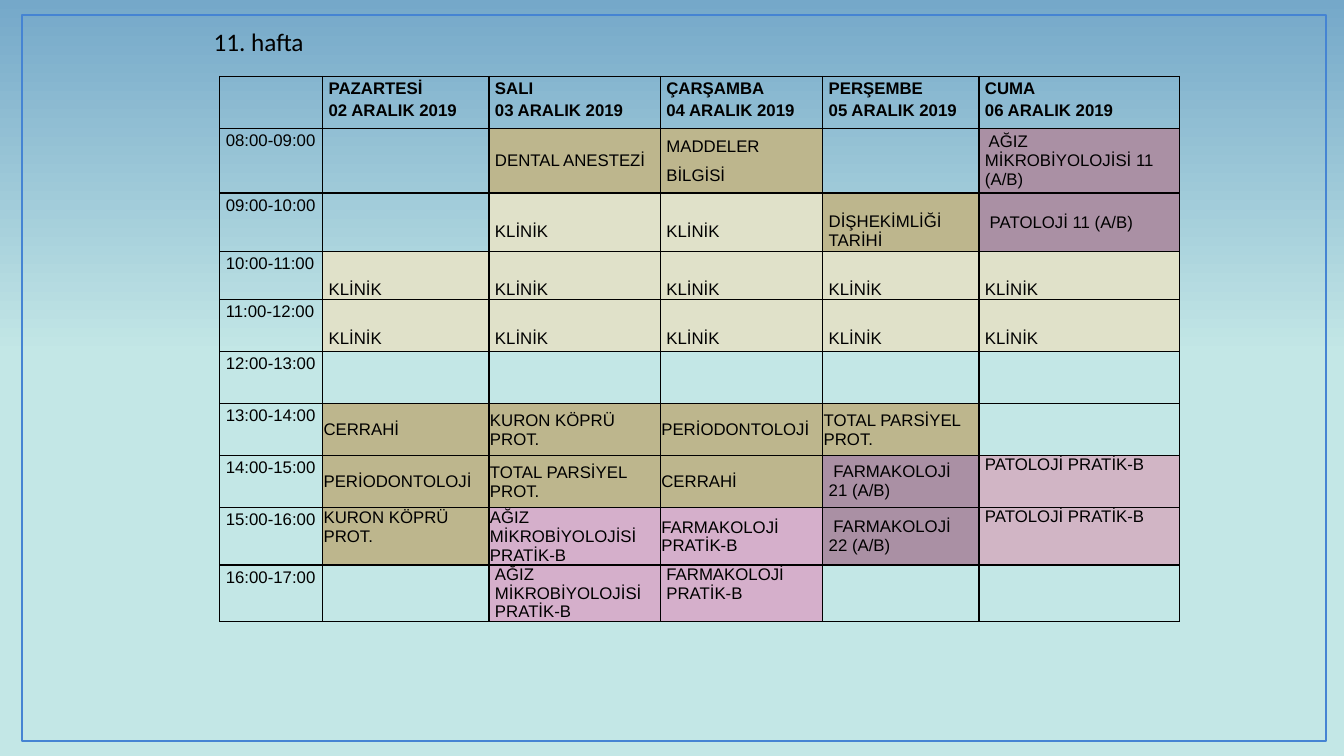
from collections import namedtuple
from dataclasses import dataclass

from lxml.etree import SubElement
from pptx import Presentation
from pptx.dml.color import RGBColor
from pptx.enum.shapes import MSO_SHAPE as Shape
from pptx.enum.text import MSO_ANCHOR as Anchor, MSO_AUTO_SIZE as AutoSize
from pptx.oxml.ns import qn
from pptx.util import Inches, Pt


@dataclass(frozen=True)
class Theme:
    """Colours, fonts and type sizes of the slide."""
    sky: str = "75A8C9"
    mist: str = "C3E7E6"
    frame: str = "4584D3"
    ink: str = "000000"
    lecture: str = "BDB68D"
    clinic: str = "E0E1C9"
    group: str = "AA90A4"
    pathology_lab: str = "D1B5C5"
    lab: str = "D5AFCB"
    table_font: str = "Arial"
    title_font: str = "Calibri"
    table_size: int = 12
    title_size: int = 18
    frame_width: float = 1.5
    border_width: int = 1


THEME = Theme()
Placement = namedtuple("Placement", "side top anchor spacing")
Entry = namedtuple("Entry", "text fill placement")

LABEL = Placement(0.6, 0, Anchor.TOP, 1.15)
TOP = Placement(0.6, 0, Anchor.TOP, None)
MIDDLE = Placement(0.6, 0, Anchor.MIDDLE, None)
FLUSH = Placement(0.1, 0.1, Anchor.MIDDLE, None)
FLUSH_TOP = Placement(0.1, 0.1, Anchor.TOP, None)
LOWERED = Placement(0.6, 1.9, Anchor.TOP, None)
LOW = Placement(0.6, 2.9, Anchor.TOP, None)
LOOSE = Placement(0.6, 0, Anchor.TOP, Pt(20))

COLUMN_WIDTHS = [10.2, 16.5, 17, 16.1, 15.5, 19.9]
ROW_HEIGHTS = [5.15, 6.4, 5.8, 4.8, 5.15, 5.15, 5.15, 5.15, 5.65, 5.6]
DAYS = ["PAZARTESİ", "SALI", "ÇARŞAMBA", "PERŞEMBE", "CUMA"]
FIRST_DATE, FIRST_HOUR = 2, 8

FREE = Entry("", None, TOP)
CLINIC = Entry("KLİNİK", THEME.clinic, LOW)
PATHOLOGY_LAB = Entry("PATOLOJİ PRATİK-B", THEME.pathology_lab, TOP)
SURGERY = Entry("CERRAHİ", THEME.lecture, FLUSH)
CROWN = Entry("KURON KÖPRÜ PROT.", THEME.lecture, FLUSH)
GUMS = Entry("PERİODONTOLOJİ", THEME.lecture, FLUSH)
DENTURE = Entry("TOTAL PARSİYEL PROT.", THEME.lecture, FLUSH)
MICROBIOLOGY_LAB = Entry("AĞIZ MİKROBİYOLOJİSİ PRATİK-B", THEME.lab, TOP)
PHARMACOLOGY_LAB = Entry("FARMAKOLOJİ PRATİK-B", THEME.lab, TOP)

SCHEDULE = [
    [FREE,
     Entry("DENTAL ANESTEZİ", THEME.lecture, MIDDLE),
     Entry("MADDELER BİLGİSİ", THEME.lecture, LOOSE),
     FREE,
     Entry(" AĞIZ MİKROBİYOLOJİSİ 11 (A/B)", THEME.group, MIDDLE)],
    [FREE, CLINIC, CLINIC,
     Entry("DİŞHEKİMLİĞİ TARİHİ", THEME.lecture, LOWERED),
     Entry(" PATOLOJİ 11 (A/B)", THEME.group, MIDDLE)],
    [CLINIC] * 5,
    [CLINIC] * 5,
    [FREE] * 5,
    [SURGERY, CROWN, GUMS, DENTURE, FREE],
    [GUMS, DENTURE, SURGERY,
     Entry(" FARMAKOLOJİ 21 (A/B)", THEME.group, MIDDLE),
     PATHOLOGY_LAB],
    [CROWN._replace(placement=FLUSH_TOP),
     MICROBIOLOGY_LAB._replace(placement=FLUSH),
     PHARMACOLOGY_LAB._replace(placement=FLUSH),
     Entry(" FARMAKOLOJİ 22 (A/B)", THEME.group, MIDDLE),
     PATHOLOGY_LAB],
    [FREE, MICROBIOLOGY_LAB, PHARMACOLOGY_LAB, FREE, FREE],
]


def grid(units):
    """Return the length of a number of tenth-inch grid steps."""
    return Inches(units / 10)


def color(code):
    """Return the colour object of a hex code."""
    return RGBColor.from_string(code)


def write(text_frame, text, *, font, size, bold=False, spacing=None):
    """Write one paragraph per line of text in the given format."""
    for number, line in enumerate(text.split("\n")):
        paragraph = text_frame.add_paragraph() if number else text_frame.paragraphs[0]
        paragraph.line_spacing = spacing
        run = paragraph.add_run()
        run.text = line
        run.font.name = font
        run.font.size = Pt(size)
        run.font.bold = bold
        run.font.color.rgb = color(THEME.ink)


def paint_background(slide):
    """Fade the background from mist at the bottom to sky at the top."""
    fill = slide.background.fill
    fill.gradient()
    fill.gradient_angle = 90
    stops = [(0.53, THEME.mist), (1, THEME.sky)]
    for stop, (position, code) in zip(fill.gradient_stops, stops):
        stop.position = position
        stop.color.rgb = color(code)


def add_frame(slide, left, top, width, height):
    """Draw the outlined frame around the slide."""
    frame = slide.shapes.add_shape(Shape.RECTANGLE, *map(grid, (left, top, width, height)))
    frame.shadow.inherit = False
    frame.fill.background()
    frame.line.color.rgb = color(THEME.frame)
    frame.line.width = Pt(THEME.frame_width)


def add_title(slide, text, left, top, width, height):
    """Add the week title as an unwrapped text box."""
    box = slide.shapes.add_textbox(*map(grid, (left, top, width, height)))
    box.text_frame.word_wrap = False
    box.text_frame.auto_size = AutoSize.SHAPE_TO_FIT_TEXT
    write(box.text_frame, text, font=THEME.title_font, size=THEME.title_size)


def add_borders(cell):
    """Give all four sides of a cell a thin solid line."""
    properties = cell._tc.get_or_add_tcPr()
    for position, side in enumerate(("a:lnL", "a:lnR", "a:lnT", "a:lnB")):
        line = SubElement(properties, qn(side), w=str(Pt(THEME.border_width)))
        fill = SubElement(line, qn("a:solidFill"))
        SubElement(fill, qn("a:srgbClr"), val=THEME.ink)
        properties.insert(position, line)


def fill_cell(cell, entry, bold=False):
    """Set the borders, fill, margins and text of a cell."""
    add_borders(cell)
    if entry.fill:
        cell.fill.solid()
        cell.fill.fore_color.rgb = color(entry.fill)
    else:
        cell.fill.background()
    placement = entry.placement
    cell.margin_left = cell.margin_right = grid(placement.side)
    cell.margin_top = grid(placement.top)
    cell.margin_bottom = 0
    cell.vertical_anchor = placement.anchor
    if entry.text:
        write(cell.text_frame, entry.text, font=THEME.table_font,
              size=THEME.table_size, bold=bold, spacing=placement.spacing)


def timetable_rows():
    """Return the header row followed by one labelled row per hour."""
    days = [Entry(f"{day}\n{date:02} ARALIK 2019", None, LABEL)
            for date, day in enumerate(DAYS, FIRST_DATE)]
    hours = [[Entry(f"{hour:02}:00-{hour + 1:02}:00", None, LABEL), *lessons]
             for hour, lessons in enumerate(SCHEDULE, FIRST_HOUR)]
    return [[FREE, *days], *hours]


def add_timetable(slide, left, top):
    """Add the weekly timetable."""
    area = (left, top, sum(COLUMN_WIDTHS), sum(ROW_HEIGHTS))
    table = slide.shapes.add_table(
        len(ROW_HEIGHTS), len(COLUMN_WIDTHS), *map(grid, area)).table
    table.first_row = table.horz_banding = False
    for column, width in zip(table.columns, COLUMN_WIDTHS):
        column.width = grid(width)
    for row, height in zip(table.rows, ROW_HEIGHTS):
        row.height = grid(height)
    for row_number, entries in enumerate(timetable_rows()):
        for column_number, entry in enumerate(entries):
            fill_cell(table.cell(row_number, column_number), entry, bold=row_number == 0)


def main():
    """Build and save the timetable slide."""
    presentation = Presentation()
    presentation.slide_width = Inches(13.33)
    presentation.slide_height = Inches(7.5)
    slide = presentation.slides.add_slide(presentation.slide_layouts[6])
    paint_background(slide)
    add_frame(slide, 2.2, 1.5, 129.3, 72)
    add_timetable(slide, 21.8, 7.6)
    add_title(slide, "11. hafta", 20.2, 2.1, 11.1, 4)
    presentation.save("out.pptx")


if __name__ == "__main__":
    main()
